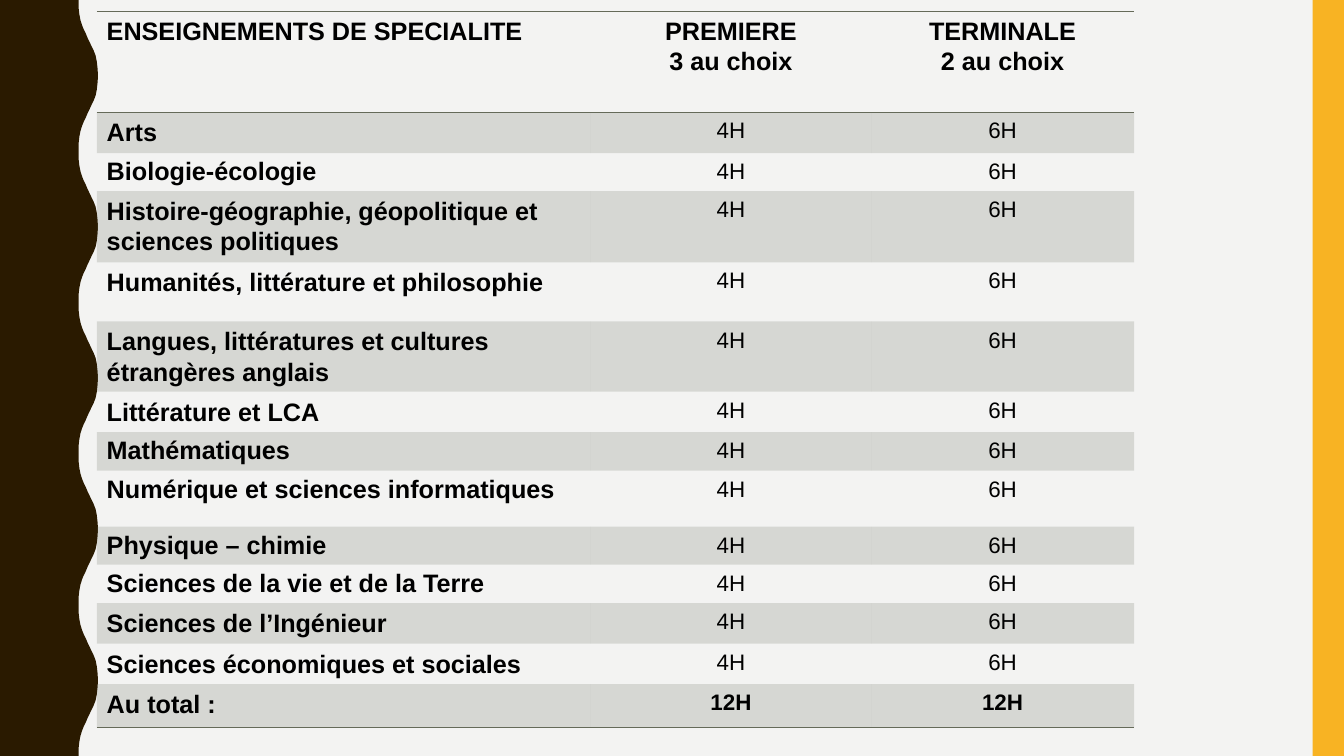
from lxml import etree
from pptx import Presentation
from pptx.dml.color import RGBColor
from pptx.enum import shapes, text
from pptx.oxml import ns
from pptx.util import Cm, Pt

BACKGROUND = RGBColor(0xF3, 0xF3, 0xF2)
BROWN = RGBColor(0x2A, 0x1A, 0x00)
YELLOW = RGBColor(0xF8, 0xB3, 0x23)
OLIVE = RGBColor(0x65, 0x6A, 0x59)
BLACK = RGBColor(0x00, 0x00, 0x00)

HEADER = (["ENSEIGNEMENTS DE SPECIALITE"], ["PREMIERE", "3 au choix"], ["TERMINALE", "2 au choix"])
HEADER_HEIGHT = 2.55
SUBJECTS = [
    ("Arts", 1.03, 1.07),
    ("Biologie-écologie", 0.96, 1.0),
    ("Histoire-géographie, géopolitique et sciences politiques", 1.79, 1.07),
    ("Humanités, littérature et philosophie", 1.49, 1.07),
    ("Langues, littératures et cultures étrangères anglais", 1.77, 1.07),
    ("Littérature et LCA", 1.02, 1.07),
    ("Mathématiques", 0.97, 1.0),
    ("Numérique et sciences informatiques", 1.41, 1.0),
    ("Physique – chimie", 0.96, 1.0),
    ("Sciences de la vie et de la Terre", 0.97, 1.0),
    ("Sciences de l’Ingénieur", 1.02, 1.07),
    ("Sciences économiques et sociales", 1.02, 1.07),
]
HOURS = ("4H", "6H")
TOTAL = ("Au total :", "12H", "12H")
TOTAL_HEIGHT = 1.09
COLUMN_WIDTHS = (12.45, 7.06, 6.63)
TABLE_LEFT, TABLE_TOP = 2.44, 0.28
SLIDE_WIDTH, SLIDE_HEIGHT = 33.87, 19.05
BAR_WIDTH = 0.79
WAVE_COUNT = 5
HALF_WAVE = [
    (1.98, 0), (1.98, 0.18), (2.0, 0.36), (2.03, 0.51), (2.07, 0.64),
    (2.11, 0.74), (2.16, 0.84), (2.21, 0.96), (2.26, 1.06), (2.31, 1.17),
    (2.36, 1.27), (2.41, 1.4), (2.44, 1.55), (2.46, 1.73), (2.47, 1.9),
]
NO_STYLE = "{2D5ABB26-0587-4C30-8999-92F81FD0307C}"
TABLE_FORMAT = {"first_row": False, "horz_banding": False}
CELL_FORMAT = {"margin_left": Cm(0.25), "margin_right": Cm(0.25),
               "margin_top": Cm(0.12), "margin_bottom": Cm(0.12)}


def paint(shape, color):
    shape.fill.solid()
    shape.fill.fore_color.rgb = color
    shape.line.fill.background()
    shape.shadow.inherit = False


def draw_wave(slide):
    period = SLIDE_HEIGHT / WAVE_COUNT
    wave = HALF_WAVE + [(x, period - y) for x, y in reversed(HALF_WAVE)]
    edge = [(Cm(x), Cm(y + index * period)) for index in range(WAVE_COUNT) for x, y in wave]
    builder = slide.shapes.build_freeform(0, 0)
    builder.add_line_segments(edge + [(0, Cm(SLIDE_HEIGHT))], close=True)
    paint(builder.convert_to_shape(), BROWN)


def draw_border(cell, side):
    properties = cell._tc.get_or_add_tcPr()
    line = etree.Element(ns.qn(f"a:ln{side}"), w=str(Pt(1)))
    fill = etree.SubElement(line, ns.qn("a:solidFill"))
    etree.SubElement(fill, ns.qn("a:srgbClr"), val=str(OLIVE))
    properties.insert(0, line)


def shade(cell):
    cell.fill.solid()
    cell.fill.fore_color.rgb = OLIVE
    color = cell._tc.tcPr.find(".//" + ns.qn("a:srgbClr"))
    etree.SubElement(color, ns.qn("a:alpha"), val="20000")


def write(cell, lines, font_format, alignment, spacing):
    for name, value in CELL_FORMAT.items():
        setattr(cell, name, value)
    for index, line in enumerate(lines):
        frame = cell.text_frame
        paragraph = frame.add_paragraph() if index else frame.paragraphs[0]
        paragraph.alignment = alignment
        paragraph.line_spacing = spacing
        run = paragraph.add_run()
        run.text = line
        run.font.color.rgb = BLACK
        for name, value in font_format.items():
            setattr(run.font, name, value)


def draw_table(slide):
    rows = [(HEADER, HEADER_HEIGHT, 1.07)]
    rows += [([[subject], *([hour] for hour in HOURS)], height, spacing)
             for subject, height, spacing in SUBJECTS]
    rows.append(([[value] for value in TOTAL], TOTAL_HEIGHT, 1.07))
    last = len(rows) - 1
    frame = slide.shapes.add_table(
        len(rows), len(COLUMN_WIDTHS), Cm(TABLE_LEFT), Cm(TABLE_TOP),
        Cm(sum(COLUMN_WIDTHS)), Cm(sum(height for _, height, _ in rows)))
    table = frame.table
    for name, value in TABLE_FORMAT.items():
        setattr(table, name, value)
    table._tbl.tblPr.find(ns.qn("a:tableStyleId")).text = NO_STYLE
    for column, width in zip(table.columns, COLUMN_WIDTHS):
        column.width = Cm(width)
    for row_index, (values, height, spacing) in enumerate(rows):
        table.rows[row_index].height = Cm(height)
        for column_index, lines in enumerate(values):
            cell = table.cell(row_index, column_index)
            heading = row_index == 0 or column_index == 0
            font_format = {"name": "Arial", "size": Pt(18 if heading else 16),
                           "bold": heading or row_index == last}
            alignment = text.PP_ALIGN.CENTER if column_index else text.PP_ALIGN.LEFT
            write(cell, lines, font_format, alignment, spacing if column_index == 0 else 1.07)
            if row_index % 2:
                shade(cell)
            else:
                cell.fill.background()
            if row_index in (0, last):
                draw_border(cell, "B")
            if row_index == 0:
                draw_border(cell, "T")


def main():
    presentation = Presentation()
    presentation.slide_width = Cm(SLIDE_WIDTH)
    presentation.slide_height = Cm(SLIDE_HEIGHT)
    slide = presentation.slides.add_slide(presentation.slide_layouts[6])
    slide.background.fill.solid()
    slide.background.fill.fore_color.rgb = BACKGROUND
    draw_wave(slide)
    bar = slide.shapes.add_shape(
        shapes.MSO_SHAPE.RECTANGLE, Cm(SLIDE_WIDTH - BAR_WIDTH), 0,
        Cm(BAR_WIDTH), Cm(SLIDE_HEIGHT))
    paint(bar, YELLOW)
    draw_table(slide)
    presentation.save("out.pptx")


if __name__ == "__main__":
    main()
